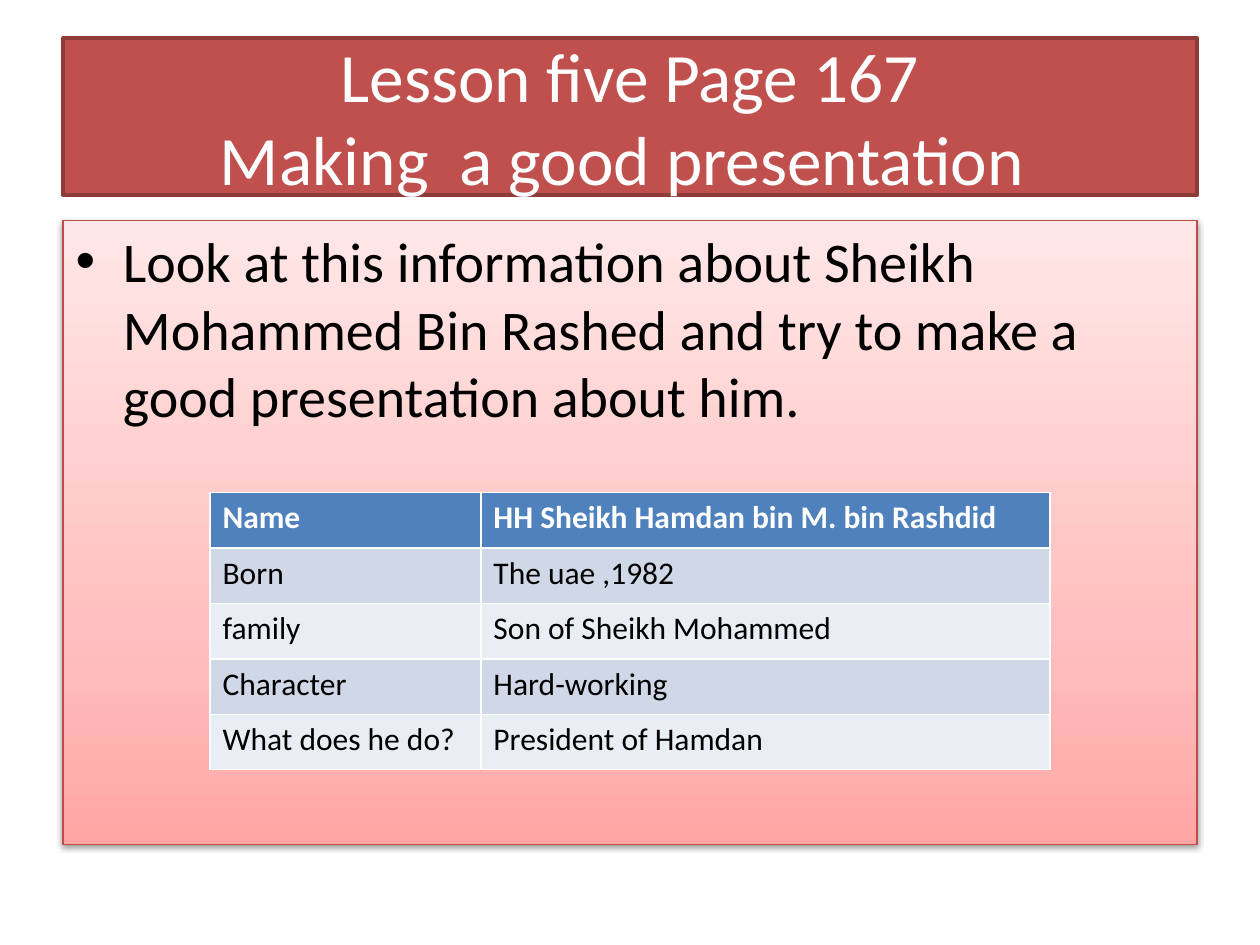
from pptx import Presentation
from pptx.dml.color import RGBColor
from pptx.enum.text import MSO_ANCHOR, MSO_AUTO_SIZE, PP_ALIGN
from pptx.oxml import parse_xml
from pptx.oxml.ns import nsdecls
from pptx.util import Inches, Pt

CENTER, MIDDLE, FIXED = PP_ALIGN.CENTER, MSO_ANCHOR.MIDDLE, MSO_AUTO_SIZE.NONE
FONT = "Calibri"
HUES = {
    "red": "C0504D", "edge": "8E3B39", "rim": "BF4C48",
    "deep": "FFA6A5", "mid": "FFC0BF", "pale": "FFE7E7",
    "head": "4F81BD", "odd": "D0D8E8", "even": "E9EDF4",
    "white": "FFFFFF", "black": "000000",
}


def hue(name):
    return RGBColor.from_string(HUES[name])


def add_run(para, text, size, color, bold=False):
    run = para.add_run()
    run.text = text
    run.font.name, run.font.size, run.font.bold = FONT, Pt(size), bold
    run.font.color.rgb = hue(color)


deck = Presentation()
deck.slide_width, deck.slide_height = Inches(10), Inches(7.5)
wide, high = deck.slide_width, deck.slide_height
slide = deck.slides.add_slide(deck.slide_layouts[1])
title, body = slide.placeholders

# Both panels share a margin of a twentieth of the slide's width
for panel, top, tall in ((title, 0.04, 1.25 / 7.5), (body, 1.75 / 7.5, 0.66)):
    panel.left, panel.width = int(wide * 0.05), int(wide * 0.9)
    panel.top, panel.height = int(high * top), int(high * tall)
    panel.text_frame.word_wrap = True
    panel.text_frame.auto_size = FIXED

# Title banner
title.fill.solid()
title.fill.fore_color.rgb = hue("red")
title.line.color.rgb = hue("edge")
title.line.width = Pt(2)
title.text_frame.vertical_anchor = MIDDLE
para = title.text_frame.paragraphs[0]
para.alignment = CENTER
add_run(para, "Lesson five Page 167", 39.6, "white")
para.add_line_break()
add_run(para, "Making  a good presentation ", 39.6, "white")

# Body panel: gradient rising from deep to pale, with a soft shadow below
stops = "".join(
    f'<a:gs pos="{share * 1000}"><a:srgbClr val="{HUES[name]}"/></a:gs>'
    for share, name in ((0, "deep"), (35, "mid"), (100, "pale")))
props = body._element.spPr
props.append(parse_xml(
    f'<a:gradFill {nsdecls("a")} rotWithShape="1"><a:gsLst>{stops}</a:gsLst>'
    '<a:lin ang="16200000" scaled="0"/></a:gradFill>'))
body.line.color.rgb = hue("rim")
body.line.width = Pt(0.75)
props.append(parse_xml(
    f'<a:effectLst {nsdecls("a")}><a:outerShdw blurRad="{Pt(3.1)}" dist="{Pt(1.6)}" '
    f'dir="5400000" rotWithShape="0"><a:srgbClr val="{HUES["black"]}">'
    '<a:alpha val="38000"/></a:srgbClr></a:outerShdw></a:effectLst>'))
add_run(body.text_frame.paragraphs[0],
        "Look at this information about Sheikh Mohammed Bin Rashed and try to "
        "make a good presentation about him.", 32, "black")

# Fact table, two thirds of the slide wide and centred
facts = (
    ("Name", "HH Sheikh Hamdan bin M. bin Rashdid"),
    ("Born", "The uae ,1982"),
    ("family", "Son of Sheikh Mohammed"),
    ("Character", "Hard-working"),
    ("What does he do?", "President of Hamdan"),
)
span, row_h = int(wide * 2 / 3), Inches(0.44)
table = slide.shapes.add_table(
    len(facts), 2, (wide - span) // 2, Inches(3.91), span, row_h * len(facts)).table
table.columns[0].width = Inches(2.15)
table.columns[1].width = span - Inches(2.15)
for r, fact in enumerate(facts):
    table.rows[r].height = row_h
    shade = "head" if r == 0 else "odd" if r % 2 else "even"
    for c, text in enumerate(fact):
        cell = table.cell(r, c)
        cell.fill.solid()
        cell.fill.fore_color.rgb = hue(shade)
        add_run(cell.text_frame.paragraphs[0], text, 18,
                "black" if r else "white", r == 0)

deck.save("out.pptx")
